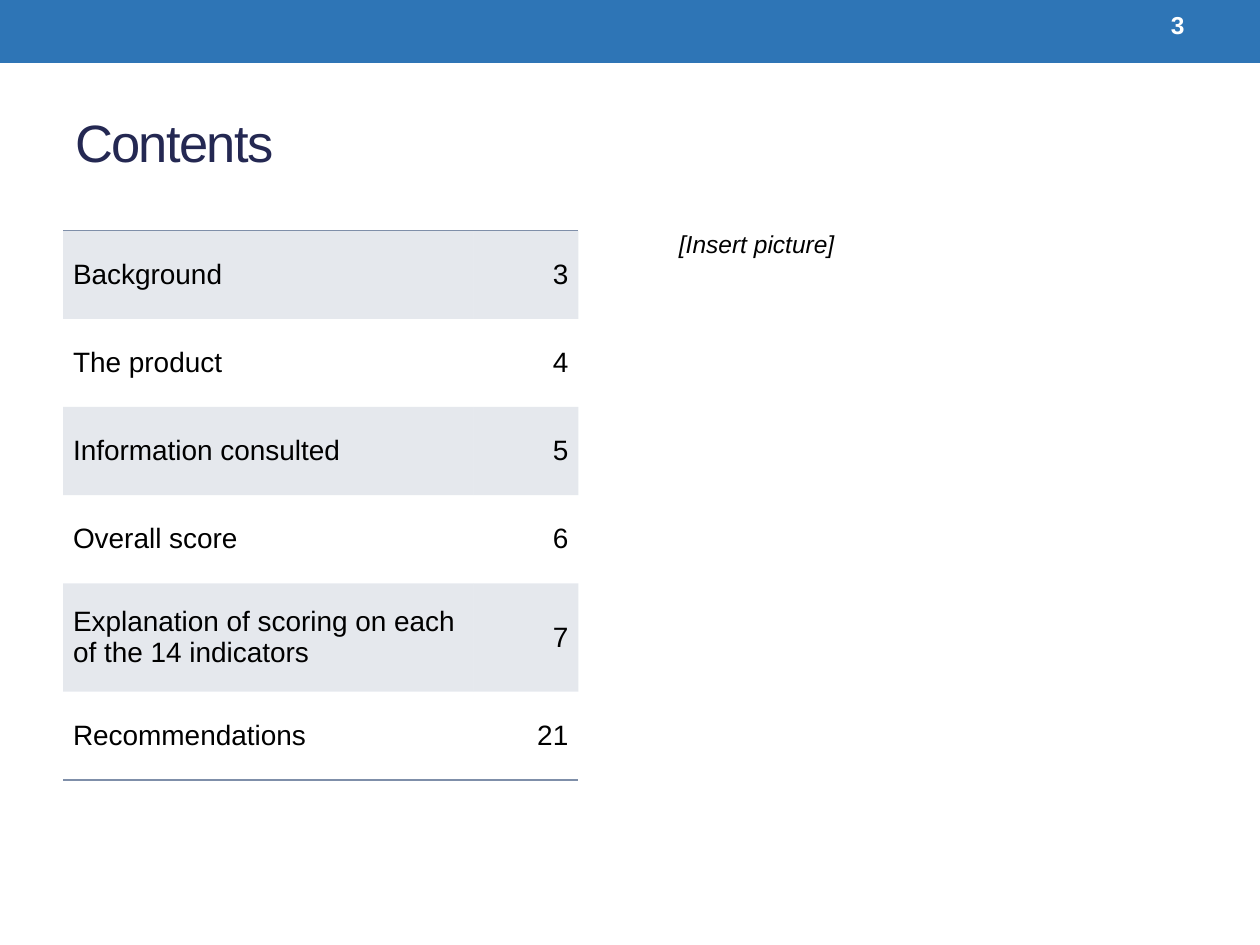
from lxml import etree
from pptx import Presentation
from pptx import util as u
from pptx.dml.color import RGBColor
from pptx.enum import shapes, text
from pptx.oxml import ns

COLOURS = {
    "banner": "2E75B6",
    "title": "242852",
    "body": "000000",
    "page": "FFFFFF",
    "table": "7F8FA9",
}
FONT = "Arial"
PLAIN_TABLE = "{2D5ABB26-0587-4C30-8999-92F81FD0307C}"
CONTENTS = [
    ("Background", "3"),
    ("The product", "4"),
    ("Information consulted", "5"),
    ("Overall score", "6"),
    ("Explanation of scoring on each of the 14 indicators", "7"),
    ("Recommendations", "21"),
]
COLUMN_WIDTHS = (3.26, 0.83)
ROW_HEIGHTS = (0.7, 0.7, 0.7, 0.7, 0.86, 0.7)


def colour(name):
    return RGBColor.from_string(COLOURS[name])


def write(frame, words, size=16, tint="body", align=text.PP_ALIGN.LEFT,
          bold=False, italic=False, spacing=None):
    para = frame.paragraphs[0]
    para.alignment = align
    span = para.add_run()
    span.text = words
    span.font.name = FONT
    span.font.size = u.Pt(size)
    span.font.bold = bold
    span.font.italic = italic
    span.font.color.rgb = colour(tint)
    if spacing is not None:
        span.font._element.set("spc", str(spacing * 100))


def add_banner(page):
    banner = page.shapes.add_shape(
        shapes.MSO_SHAPE.RECTANGLE, 0, 0, u.Inches(10), u.Inches(0.5))
    banner.shadow.inherit = False
    banner.fill.solid()
    banner.fill.fore_color.rgb = colour("banner")
    banner.line.fill.background()


def add_text(page, words, place, anchor=text.MSO_ANCHOR.MIDDLE, **style):
    box = page.shapes.add_textbox(*(u.Inches(length) for length in place))
    box.text_frame.word_wrap = True
    box.text_frame.vertical_anchor = anchor
    write(box.text_frame, words, **style)


def shade(cell):
    cell.fill.solid()
    cell.fill.fore_color.rgb = colour("table")
    tint = cell._tc.tcPr.find(".//" + ns.qn("a:srgbClr"))
    etree.SubElement(tint, ns.qn("a:alpha"), val="20000")


def rule(cell, side):
    line = etree.Element(ns.qn("a:" + side), w=str(u.Pt(1)))
    fill = etree.SubElement(line, ns.qn("a:solidFill"))
    etree.SubElement(fill, ns.qn("a:srgbClr"), val=COLOURS["table"])
    cell._tc.get_or_add_tcPr().insert(0, line)


def add_contents(page):
    frame = page.shapes.add_table(
        len(CONTENTS), len(COLUMN_WIDTHS), u.Inches(0.5), u.Inches(1.83),
        u.Inches(sum(COLUMN_WIDTHS)), u.Inches(sum(ROW_HEIGHTS)))
    table = frame.table
    table._tbl.tblPr.find(ns.qn("a:tableStyleId")).text = PLAIN_TABLE
    table.first_row = False
    table.horz_banding = False
    for column, width in zip(table.columns, COLUMN_WIDTHS):
        column.width = u.Inches(width)
    for row, height in zip(table.rows, ROW_HEIGHTS):
        row.height = u.Inches(height)

    aligns = (text.PP_ALIGN.LEFT, text.PP_ALIGN.RIGHT)
    last = len(CONTENTS) - 1
    for index, entry in enumerate(CONTENTS):
        for cell, words, align in zip(table.rows[index].cells, entry, aligns):
            cell.vertical_anchor = text.MSO_ANCHOR.MIDDLE
            cell.margin_left = cell.margin_right = u.Inches(0.08)
            write(cell.text_frame, words, align=align)
            if index % 2 == 0:
                shade(cell)
            else:
                cell.fill.background()
            if index == 0:
                rule(cell, "lnT")
            if index == last:
                rule(cell, "lnB")


def main():
    deck = Presentation()
    deck.slide_width = u.Inches(10)
    deck.slide_height = u.Inches(7.5)
    page = deck.slides.add_slide(deck.slide_layouts[6])
    add_banner(page)
    add_text(page, "Contents", (0.5, 0.58, 9, 1.08),
             size=30, tint="title", spacing=-1)
    add_contents(page)
    add_text(page, "[Insert picture]", (5.29, 1.77, 4.21, 4.35),
             anchor=text.MSO_ANCHOR.TOP, size=14, italic=True)
    add_text(page, "3", (8.33, 0.02, 1.17, 0.36), size=14, tint="page",
             align=text.PP_ALIGN.RIGHT, bold=True)
    deck.save("out.pptx")


if __name__ == "__main__":
    main()
